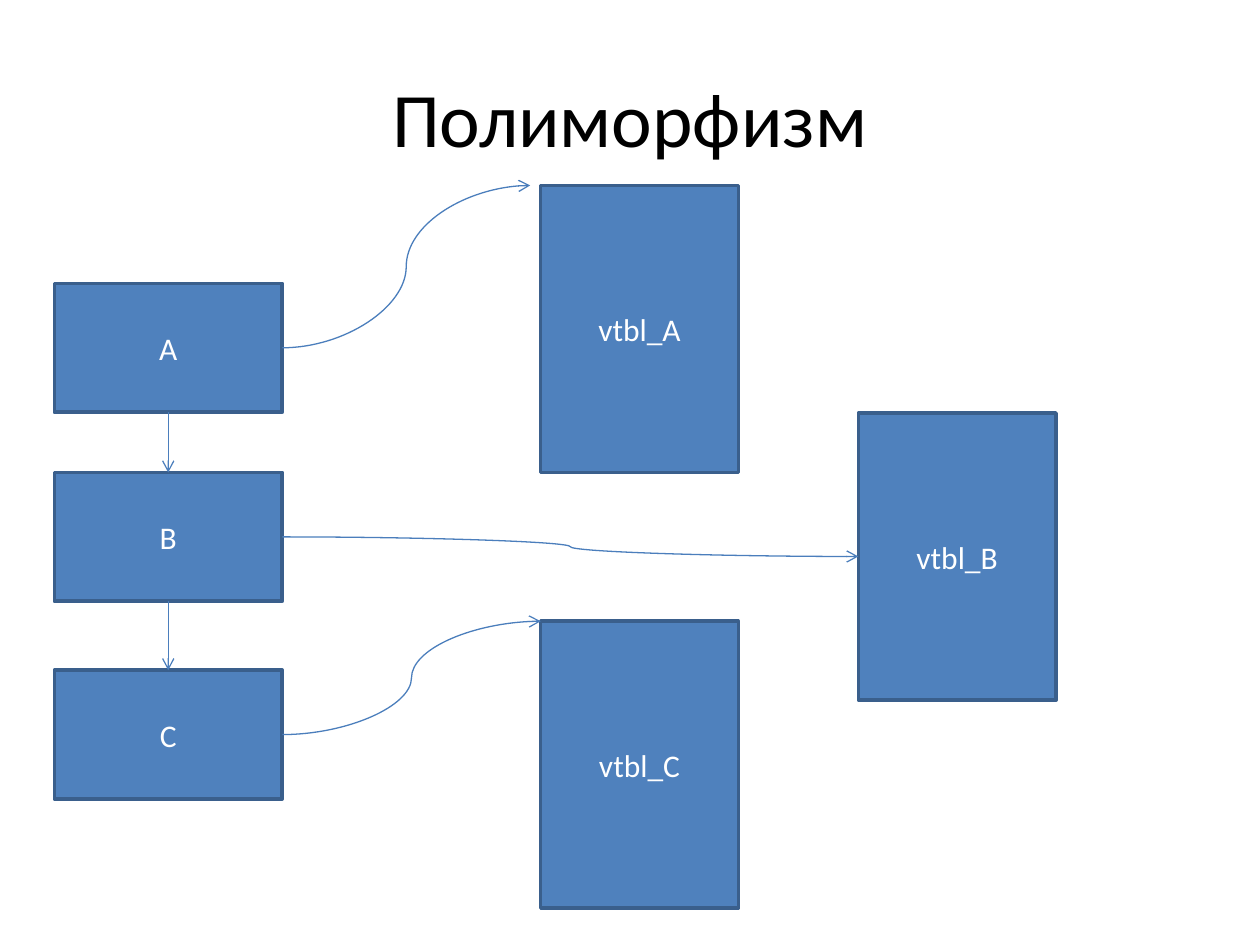
from lxml import etree
from pptx import Presentation
from pptx import util as u
from pptx.dml.color import RGBColor
from pptx.enum import shapes, text
from pptx.oxml.ns import qn

Pt = u.Pt
COLORS = {"box": "4F81BD", "border": "3A5F8C", "arrow": "4B7EBC",
          "title": "000000", "label": "FFFFFF"}
CLASS_LEFT, CLASS_W, CLASS_H = 31, 130.3, 73.6
TABLE_W, TABLE_H = 113, 164
# class name: top of its box, left and top of its table
CLASSES = {"A": (162, 309, 106), "B": (270, 490.5, 236), "C": (383, 309, 355)}


def color(name):
    return RGBColor.from_string(COLORS[name])


def write(s, content, size, color_name):
    """Centre one line of text in a shape."""
    tf = s.text_frame
    tf.word_wrap = True
    tf.vertical_anchor = text.MSO_ANCHOR.MIDDLE
    tf.text = content
    p = tf.paragraphs[0]
    p.alignment = text.PP_ALIGN.CENTER
    font = p.runs[0].font
    font.name, font.size = "Calibri", Pt(size)
    font.color.rgb = color(color_name)


def add_box(slide, label, left, top, width, height):
    s = slide.shapes.add_shape(shapes.MSO_SHAPE.RECTANGLE,
                               Pt(left), Pt(top), Pt(width), Pt(height))
    s.shadow.inherit = False
    s.fill.solid()
    s.fill.fore_color.rgb = color("box")
    s.line.color.rgb = color("border")
    s.line.width = Pt(2)
    write(s, label, 18, "label")


def add_arrow(slide, kind, start, end):
    s = slide.shapes.add_connector(kind, *(Pt(v) for v in (*start, *end)))
    s.line.color.rgb = color("arrow")
    s.line.width = Pt(0.75)
    etree.SubElement(s.line._get_or_add_ln(), qn("a:tailEnd"), type="arrow")
    etree.SubElement(s._element.spPr, qn("a:effectLst"))


def main():
    prs = Presentation()
    prs.slide_width, prs.slide_height = Pt(720), Pt(540)
    slide = prs.slides.add_slide(prs.slide_layouts[6])

    # Title
    title = slide.shapes.add_textbox(Pt(36), Pt(21.6), Pt(648), Pt(90))
    write(title, "Полиморфизм", 44, "title")

    # Classes and their virtual tables
    for name, (top, table_left, table_top) in CLASSES.items():
        add_box(slide, name, CLASS_LEFT, top, CLASS_W, CLASS_H)
        add_box(slide, f"vtbl_{name}", table_left, table_top, TABLE_W, TABLE_H)

    # Inheritance arrows
    tops = [top for top, *_ in CLASSES.values()]
    center = CLASS_LEFT + CLASS_W / 2
    for upper, lower in zip(tops, tops[1:]):
        add_arrow(slide, shapes.MSO_CONNECTOR.STRAIGHT,
                  (center, upper + CLASS_H), (center, lower))

    # Arrows from each class to its table
    ends = {"A": (303, 106), "B": (490.5, 236 + TABLE_H / 2), "C": (309, 355)}
    for name, end in ends.items():
        start = (CLASS_LEFT + CLASS_W, CLASSES[name][0] + CLASS_H / 2)
        add_arrow(slide, shapes.MSO_CONNECTOR.CURVE, start, end)

    prs.save("out.pptx")


if __name__ == "__main__":
    main()
